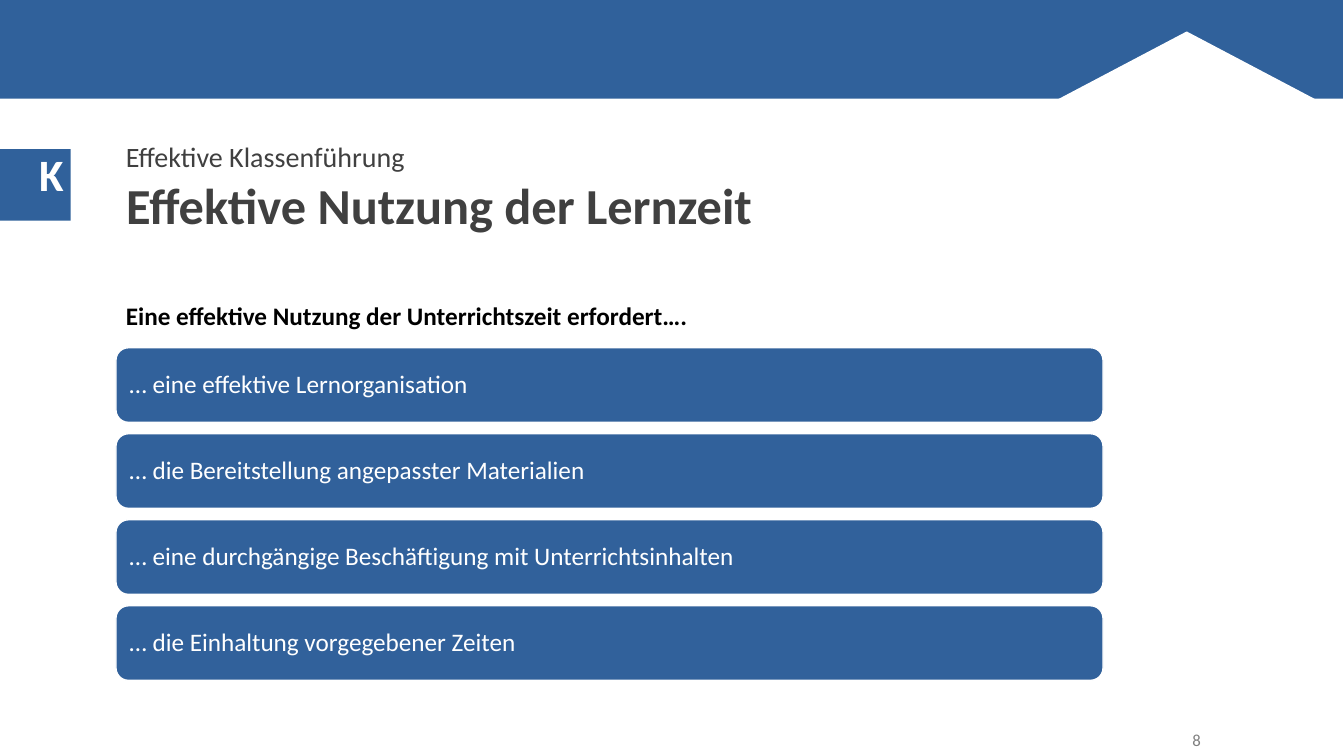
import pptx
import pptx.util
import pptx.dml.color
import pptx.enum.shapes
import pptx.enum.text

PX = 9144
BLUE = pptx.dml.color.RGBColor(0x30, 0x61, 0x9B)
BAR_BLUE = pptx.dml.color.RGBColor(0x31, 0x61, 0x9B)
WHITE = pptx.dml.color.RGBColor(0xFF, 0xFF, 0xFF)
BLACK = pptx.dml.color.RGBColor(0x00, 0x00, 0x00)
DARK = pptx.dml.color.RGBColor(0x40, 0x40, 0x40)
GREY = pptx.dml.color.RGBColor(0x80, 0x80, 0x80)

SHAPE = pptx.enum.shapes.MSO_SHAPE
ANCHOR = pptx.enum.text.MSO_ANCHOR
ALIGN = pptx.enum.text.PP_ALIGN

BAR_TOP, BAR_STEP = 345, 85.33
REQUIREMENTS = [
    "… eine effektive Lernorganisation",
    "… die Bereitstellung angepasster Materialien",
    "… eine durchgängige Beschäftigung mit Unterrichtsinhalten",
    "… die Einhaltung vorgegebener Zeiten",
]


def px(*lengths):
    return [round(length * PX) for length in lengths]


def write(sp, text, size, color, bold=False, anchor=ANCHOR.TOP,
          align=ALIGN.LEFT, spacing=0.9):
    tf = sp.text_frame
    tf.text = text
    tf.word_wrap = True
    tf.auto_size = pptx.enum.text.MSO_AUTO_SIZE.NONE
    tf.vertical_anchor = anchor
    p = tf.paragraphs[0]
    p.alignment = align
    p.line_spacing = spacing
    p.space_before = pptx.util.Pt(0)
    font = p.runs[0].font
    font.name = "Calibri"
    font.size = pptx.util.Pt(size)
    font.bold = bold
    font.color.rgb = color


def add_block(s, kind, box, fill, line=None):
    sp = s.shapes.add_shape(kind, *px(*box))
    sp.shadow.inherit = False
    sp.fill.solid()
    sp.fill.fore_color.rgb = fill
    if line is None:
        sp.line.fill.background()
    else:
        sp.line.color.rgb = line
        sp.line.width = pptx.util.Pt(1)
    return sp


def add_label(s, box, text, size, color, **style):
    write(s.shapes.add_textbox(*px(*box)), text, size, color, **style)


def add_title(s, box, text):
    sp = s.shapes.title
    sp.left, sp.top, sp.width, sp.height = px(*box)
    write(sp, text, 36, DARK, bold=True, anchor=ANCHOR.BOTTOM)


def add_bar(s, top, text):
    sp = add_block(s, SHAPE.ROUNDED_RECTANGLE, (115, top, 979, 74), BAR_BLUE, WHITE)
    write(sp, text, 18, WHITE, anchor=ANCHOR.MIDDLE)


def main():
    prs = pptx.Presentation()
    prs.slide_width, prs.slide_height = px(1333, 750)
    s = prs.slides.add_slide(prs.slide_layouts[5])

    add_block(s, SHAPE.RECTANGLE, (-1, 0, 1333, 98), BLUE)
    add_block(s, SHAPE.ISOSCELES_TRIANGLE, (955, 32, 444, 117), WHITE, WHITE)
    add_block(s, SHAPE.RECTANGLE, (-1, 148, 71, 71), BLUE)
    add_label(s, (29, 141, 36, 64), "K", 32, WHITE, bold=True, spacing=1.0)

    add_label(s, (115, 122, 994, 55), "Effektive Klassenführung", 20, DARK,
              anchor=ANCHOR.BOTTOM)
    add_title(s, (115, 173, 994, 66), "Effektive Nutzung der Lernzeit")
    add_label(s, (115, 296, 1027, 45),
              "Eine effektive Nutzung der Unterrichtszeit erfordert….", 18, BLACK,
              bold=True)
    for i, requirement in enumerate(REQUIREMENTS):
        add_bar(s, BAR_TOP + i * BAR_STEP, requirement)
    add_label(s, (901, 717, 300, 33), "8", 12, GREY, anchor=ANCHOR.MIDDLE,
              align=ALIGN.RIGHT, spacing=1.0)

    prs.save("out.pptx")


if __name__ == "__main__":
    main()
